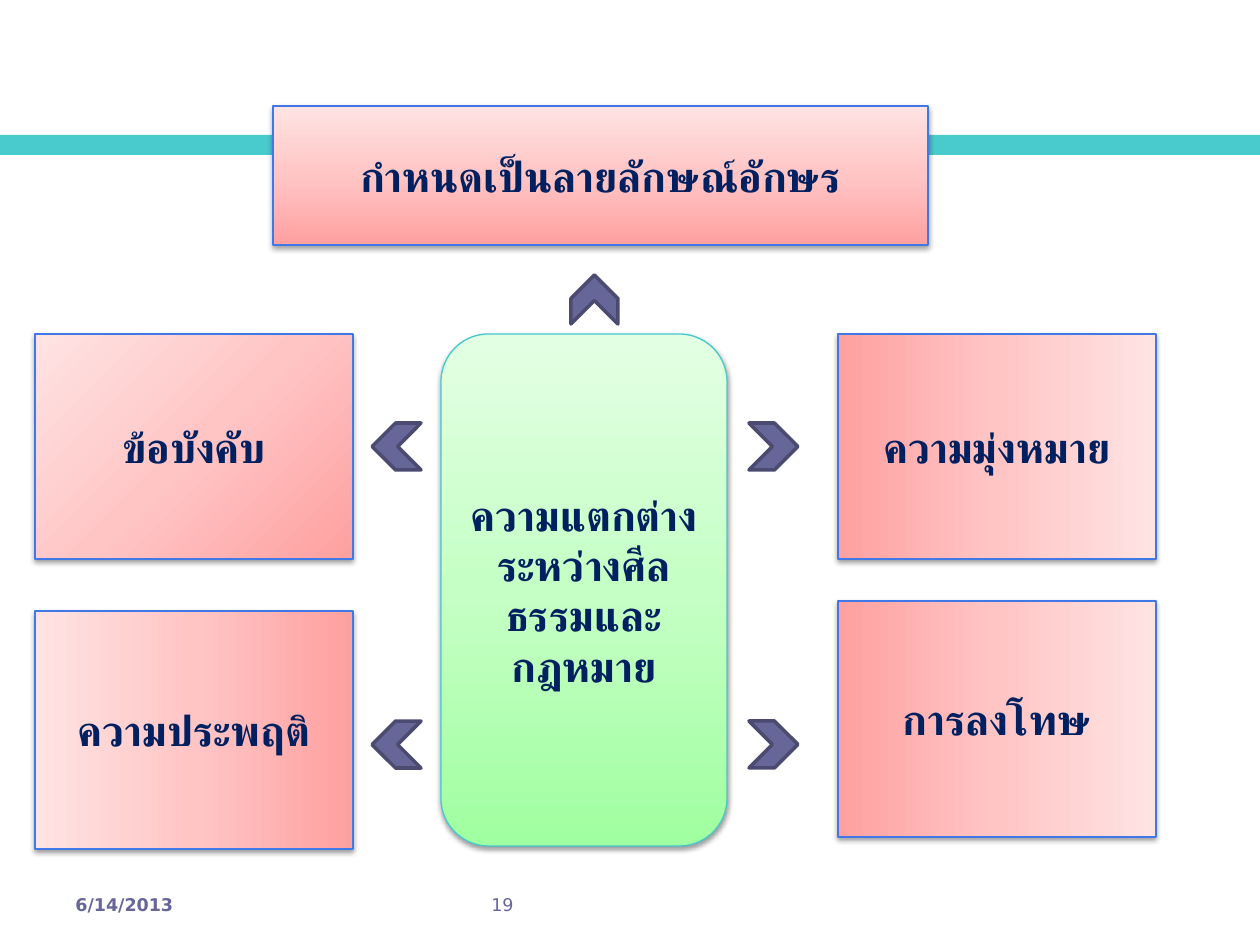
from pptx import Presentation
from pptx.dml.color import RGBColor
from pptx.enum.lang import MSO_LANGUAGE_ID as Language
from pptx.enum.shapes import MSO_SHAPE as Shape
from pptx.enum.text import MSO_ANCHOR as Anchor, PP_ALIGN as Align
from pptx.oxml import parse_xml
from pptx.oxml.ns import nsdecls
from pptx.util import Pt

PX = 914400 // 126  # EMU in one px

# Content: text, box (left, top, width, height), gradient angle
TOPICS = [
    ("กำหนดเป็นลายลักษณ์อักษร", (273, 106, 655, 139), 270),
    ("ข้อบังคับ", (35, 334, 318, 225), 225),
    ("ความประพฤติ", (35, 611, 318, 238), 180),
    ("ความมุ่งหมาย", (838, 334, 318, 225), 0),
    ("การลงโทษ", (838, 601, 318, 236), 0),
]
CENTRE = ("ความแตกต่างระหว่างศีลธรรมและกฎหมาย", (441, 334, 286, 512), 270)
FOOTER = [("6/14/2013", 63, True), ("19", 479, False)]

# Chevrons: left, top, rotation
CHEVRON_SIZE = (49, 47)
CHEVRONS = [(570, 276, 270)] + [
    (left, top, rotation)
    for left, rotation in ((372, 180), (749, 0))
    for top in (423, 721)
]

RED = ("FFA0A0", "FFC5C5", "FFE3E3")
GREEN = ("A0FFA0", "C5FFC5", "E3FFE3")


def rgb(value):
    return RGBColor.from_string(value)


def scaled(box):
    return [value * PX for value in box]


def write(shape, text, size=24, font="Roboto", color="002060", bold=True,
          align=Align.CENTER, anchor=Anchor.MIDDLE, language=Language.THAI):
    frame = shape.text_frame
    frame.word_wrap = True
    frame.vertical_anchor = anchor
    paragraph = frame.paragraphs[0]
    paragraph.alignment = align
    run = paragraph.add_run()
    run.text = text
    run.font.size = Pt(size)
    run.font.bold = bold
    run.font.name = font
    run.font.color.rgb = rgb(color)
    run.font.language_id = language
    # Thai letters take the complex-script font
    run.font._element.append(
        parse_xml(f'<a:cs {nsdecls("a")} typeface="{font}"/>'))


def add_block(kind, box, fill, line=None, width=0.75):
    shape = slide.shapes.add_shape(kind, *scaled(box))
    shape.shadow.inherit = False
    shape.fill.solid()
    shape.fill.fore_color.rgb = rgb(fill)
    if line:
        shape.line.color.rgb = rgb(line)
        shape.line.width = Pt(width)
    else:
        shape.line.fill.background()
    return shape


def add_card(kind, text, box, angle, colors, line):
    shape = add_block(kind, box, colors[0], line)
    properties = shape._element.spPr
    # Three-stop gradient
    stops = "".join(
        f'<a:gs pos="{i * 50000}"><a:srgbClr val="{color}"/></a:gs>'
        for i, color in enumerate(colors))
    solid = properties.find("{*}solidFill")
    properties.replace(solid, parse_xml(
        f'<a:gradFill {nsdecls("a")} rotWithShape="1"><a:gsLst>{stops}</a:gsLst>'
        f'<a:lin ang="{angle * 60000}" scaled="0"/></a:gradFill>'))
    # Soft shadow straight below
    properties.find("{*}effectLst").append(parse_xml(
        f'<a:outerShdw {nsdecls("a")} blurRad="{Pt(3.1)}" dist="{Pt(1.6)}" '
        'dir="5400000" rotWithShape="0"><a:srgbClr val="000000">'
        '<a:alpha val="38000"/></a:srgbClr></a:outerShdw>'))
    write(shape, text)


presentation = Presentation()
presentation.slide_width, presentation.slide_height = scaled((1260, 945))
slide = presentation.slides.add_slide(presentation.slide_layouts[6])

# Band behind the top card
add_block(Shape.RECTANGLE, (0, 135, 1260, 20), "49CACD")

# Date and page number
for text, left, bold in FOOTER:
    footer = slide.shapes.add_textbox(*scaled((left, 888, 294, 44)))
    write(footer, text, size=10, font="DejaVu Sans", color="666699", bold=bold,
          align=Align.LEFT, anchor=Anchor.TOP, language=Language.ENGLISH_US)

# Central theme and the topics around it
add_card(Shape.ROUNDED_RECTANGLE, *CENTRE, GREEN, "44C9CC")
for topic in TOPICS:
    add_card(Shape.RECTANGLE, *topic, RED, "4078E7")

# Chevrons pointing outwards
for left, top, rotation in CHEVRONS:
    chevron = add_block(Shape.CHEVRON, (left, top, *CHEVRON_SIZE),
                        "666699", "4B4B71", 2)
    chevron.rotation = rotation

presentation.save("out.pptx")
